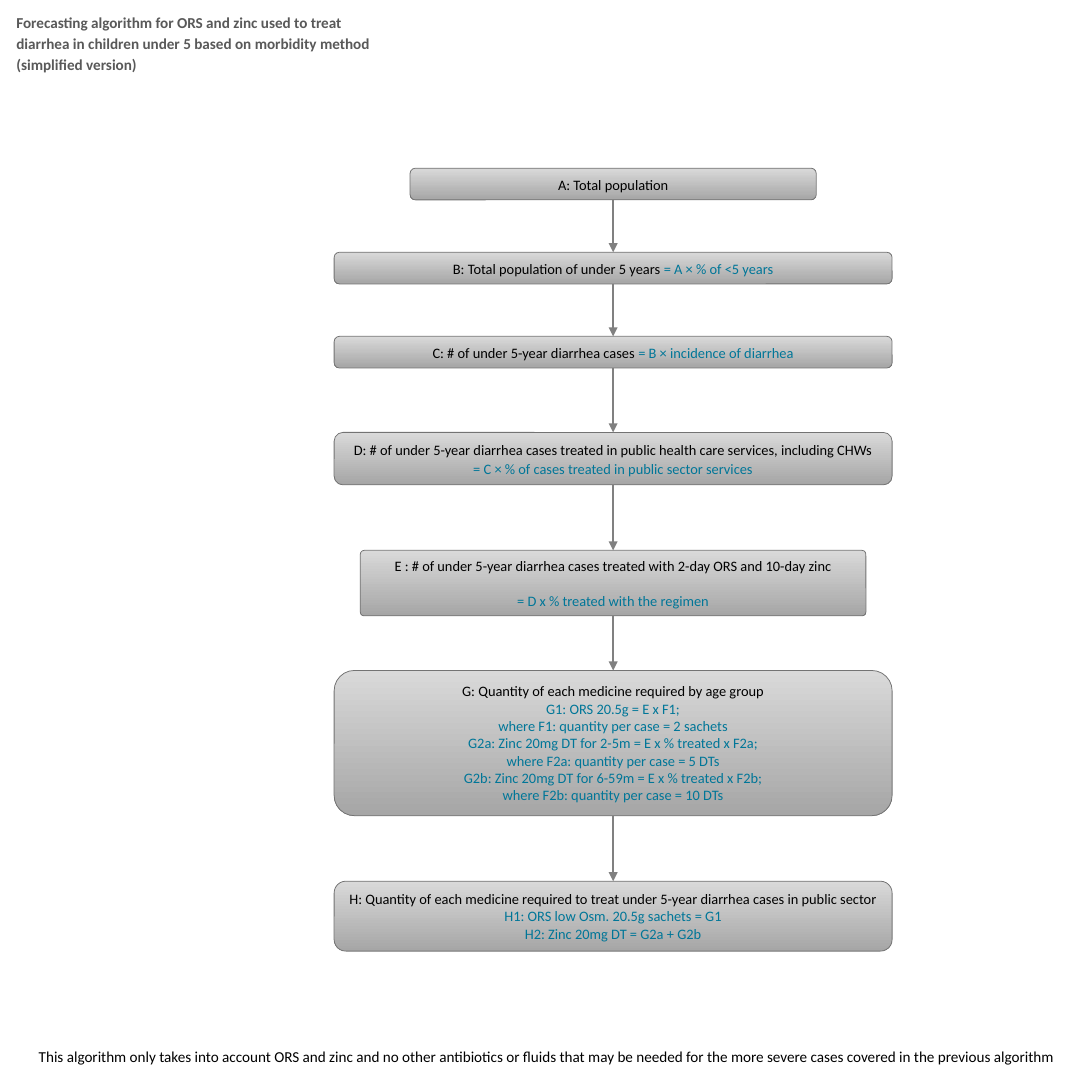
from dataclasses import dataclass

from lxml.etree import SubElement
from pptx import Presentation
from pptx.dml.color import RGBColor as RGB
from pptx.enum.shapes import MSO_CONNECTOR as CONNECTOR, MSO_SHAPE as SHAPE
from pptx.enum.text import MSO_ANCHOR as ANCHOR, MSO_AUTO_SIZE as AUTO, PP_ALIGN as ALIGN
from pptx.oxml.ns import qn
from pptx.util import Inches, Pt

TITLE = ("Forecasting algorithm for ORS and zinc used to treat diarrhea in children "
         "under 5 based on morbidity method (simplified version)")
NOTE = ("This algorithm only takes into account ORS and zinc and no other antibiotics or fluids "
        "that may be needed for the more severe cases covered in the previous algorithm")


@dataclass(frozen=True)
class Theme:
    font: str = "Calibri"
    text: str = "000000"
    formula: str = "007698"
    title: str = "595959"
    border: str = "737373"
    arrow: str = "808080"
    gradient: tuple = ("D9D9D9", "A6A6A6")
    step_size: float = 9.5
    size: float = 10


@dataclass(frozen=True)
class Step:
    top: float
    height: float
    lines: tuple
    width: float = 51.1
    corner: float = 0.167
    spacing: float = 1.0
    gap: float = 0


T = Theme()
SIDE = Inches(10)
AXIS = 56.15
TITLE_BOX = (0.5, 0.5, 34.9, 6.7)
NOTE_BOX = (1.1, 95.4, 97.8, 2.7)


def label(text):
    return text, T.text


def formula(text):
    return text, T.formula


STEPS = (
    Step(15.4, 2.9, ((label("A: Total population"),),), width=37.2, spacing=1.07),
    Step(23.1, 2.9, ((label("B: Total population of under 5 years "),
                      formula("= A × % of <5 years")),), spacing=1.07),
    Step(30.8, 2.9, ((label("C: # of under 5-year diarrhea cases "),
                      formula("= B × incidence of diarrhea")),), spacing=1.06),
    Step(39.6, 4.8, (
        (label("D: # of under 5-year diarrhea cases treated in public health care services, "
               "including CHWs"),),
        (formula("= C × % of cases treated in public sector services"),)), spacing=1.06),
    Step(50.4, 6.0, (
        (label("E : # of under 5-year diarrhea cases treated with 2-day ORS and 10-day zinc"),),
        (formula("= D x % treated with the regimen"),)), width=46.3, corner=0.06, gap=11.6),
    Step(61.4, 13.3, (
        (label("G: Quantity of each medicine required by age group"),),
        (formula("G1: ORS 20.5g = E x F1;"),),
        (formula("where F1: quantity per case = 2 sachets"),),
        (formula("G2a: Zinc 20mg DT for 2-5m = E x % treated x F2a;"),),
        (formula("where F2a: quantity per case = 5 DTs"),),
        (formula("G2b: Zinc 20mg DT for 6-59m = E x % treated x F2b;"),),
        (formula("where F2b: quantity per case = 10 DTs"),)), corner=0.14),
    Step(80.7, 6.4, (
        (label("H: Quantity of each medicine required to treat under 5-year diarrhea cases "
               "in public sector"),),
        (formula("H1: ORS low Osm. 20.5g sachets = G1"),),
        (formula("H2: Zinc 20mg DT = G2a + G2b"),))),
)


def place(*percents):
    return [round(SIDE * percent / 100) for percent in percents]


def add_run(p, text, size, color, bold=False):
    r = p.add_run()
    r.text = text
    r.font.name, r.font.size, r.font.bold = T.font, Pt(size), bold
    r.font.color.rgb = RGB.from_string(color)


def add_title(s):
    sp = s.shapes.title
    sp.left, sp.top, sp.width, sp.height = place(*TITLE_BOX)
    tf = sp.text_frame
    tf.word_wrap, tf.auto_size, tf.vertical_anchor = True, AUTO.NONE, ANCHOR.TOP
    p = tf.paragraphs[0]
    p.alignment, p.line_spacing = ALIGN.LEFT, 1.15
    p.space_before, p.space_after = Pt(6), Pt(18)
    add_run(p, TITLE, T.size, T.title, bold=True)


def add_note(s):
    tf = s.shapes.add_textbox(*place(*NOTE_BOX)).text_frame
    tf.word_wrap = True
    p = tf.paragraphs[0]
    p.alignment = ALIGN.CENTER
    add_run(p, NOTE, T.size, T.text)


def add_step(s, step):
    box = place(AXIS - step.width / 2, step.top, step.width, step.height)
    sp = s.shapes.add_shape(SHAPE.ROUNDED_RECTANGLE, *box)
    sp.adjustments[0] = step.corner
    sp.shadow.inherit = False
    sp.fill.gradient()
    sp.fill.gradient_angle = 270
    for stop, color in zip(sp.fill.gradient_stops, T.gradient):
        stop.color.rgb = RGB.from_string(color)
    sp.line.color.rgb = RGB.from_string(T.border)
    sp.line.width = Pt(0.5)
    tf = sp.text_frame
    tf.word_wrap, tf.vertical_anchor = True, ANCHOR.MIDDLE
    tf.margin_left = tf.margin_right = Inches(0.04)
    tf.margin_top = tf.margin_bottom = Inches(0.05)
    for i, line in enumerate(step.lines):
        p = tf.add_paragraph() if i else tf.paragraphs[0]
        p.alignment, p.line_spacing = ALIGN.CENTER, step.spacing
        p.space_before = Pt(step.gap if i else 0)
        for text, color in line:
            add_run(p, text, T.step_size, color)
    return sp


def add_arrow(s, start, end):
    arrow = s.shapes.add_connector(CONNECTOR.STRAIGHT, 0, 0, 0, 0)
    arrow.begin_connect(start, 2)
    arrow.end_connect(end, 0)
    arrow.line.color.rgb = RGB.from_string(T.arrow)
    arrow.line.width = Pt(1.5)
    SubElement(arrow.line._get_or_add_ln(), qn("a:tailEnd"), type="triangle")
    SubElement(arrow._element.spPr, qn("a:effectLst"))


def main():
    prs = Presentation()
    prs.slide_width = prs.slide_height = SIDE
    s = prs.slides.add_slide(prs.slide_layouts[5])
    add_title(s)
    boxes = [add_step(s, step) for step in STEPS]
    for start, end in zip(boxes, boxes[1:]):
        add_arrow(s, start, end)
    add_note(s)
    prs.save("out.pptx")


if __name__ == "__main__":
    main()
